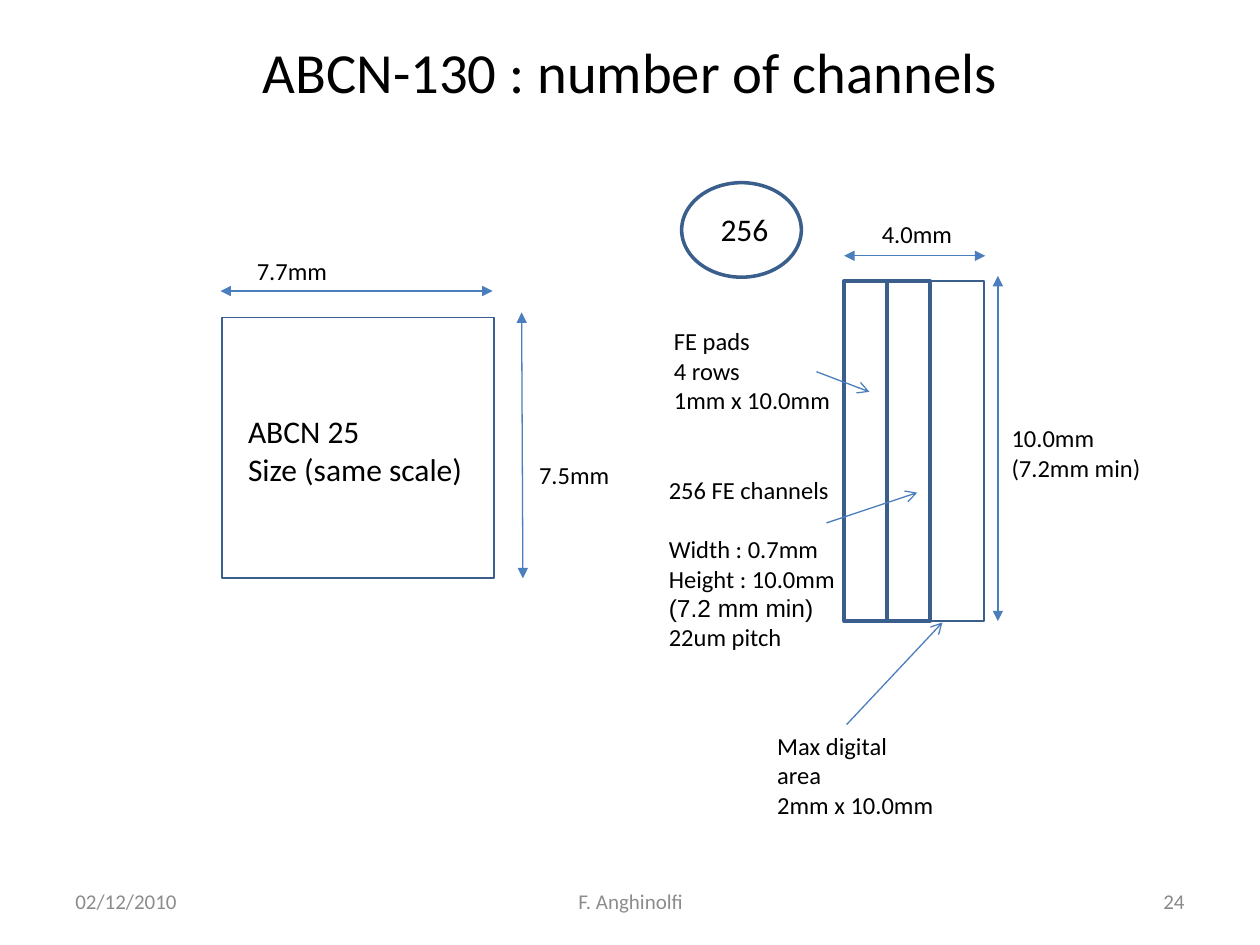
from lxml import etree
from pptx import Presentation
from pptx.dml.color import RGBColor
from pptx.enum.shapes import MSO_CONNECTOR, MSO_SHAPE
from pptx.enum.text import MSO_ANCHOR, MSO_AUTO_SIZE, PP_ALIGN
from pptx.oxml.ns import qn
from pptx.util import Inches, Pt

RECT, OVAL = MSO_SHAPE.RECTANGLE, MSO_SHAPE.OVAL
LEFT, CENTER, RIGHT = PP_ALIGN.LEFT, PP_ALIGN.CENTER, PP_ALIGN.RIGHT
TOP, MIDDLE = MSO_ANCHOR.TOP, MSO_ANCHOR.MIDDLE
FONT, BLACK, GREY = "Calibri", "000000", "8C8C8C"
OUTLINE, ARROW = "3A5F8C", "4B7EBC"

TITLE = "ABCN-130 : number of channels"

# kind, (left, top, width, height), fill, line width
CHIP_TOP, CHIP_H, STRIP_W = 2.23, 2.7, 0.34
SHAPES = [
    (OVAL, (5.41, 1.45, 0.95, 0.75), "FFFFFF", 2),
    (RECT, (1.76, 2.52, 2.16, 2.07), None, 1),
    (RECT, (6.7, CHIP_TOP, 1.11, CHIP_H), None, 1),
] + [(RECT, (6.7 + i * STRIP_W, CHIP_TOP, STRIP_W, CHIP_H), None, 2)
     for i in range(2)]

# (left, top, width, height), size, lines
LABELS = [
    ((5.25, 2.54, 1.45, 0.81), 14, ["FE pads", "4 rows", "1mm x 10.0mm"]),
    ((6.07, 5.75, 1.45, 0.81), 14, ["Max digital", "area", "2mm x 10.0mm"]),
    ((7.93, 3.31, 1.23, 0.57), 14, ["10.0mm", "(7.2mm min)"]),
    ((6.9, 1.69, 0.76, 0.34), 14, ["4.0mm"]),
    ((5.62, 1.62, 0.59, 0.4), 18, ["256"]),
    ((1.87, 3.22, 1.92, 0.71), 18, ["ABCN 25", "Size (same scale)"]),
    ((1.94, 1.98, 0.76, 0.34), 14, ["7.7mm"]),
    ((4.18, 3.6, 0.76, 0.34), 14, ["7.5mm"]),
]
CHANNELS_BOX = (5.21, 3.72, 1.53, 1.51)
CHANNELS = ["256 FE channels", "Width : 0.7mm", "Height : 10.0mm",
            "(7.2 mm min)", "22um pitch"]

# start, end
POINTERS = [
    ((6.48, 2.95), (6.9, 3.11)),
    ((6.56, 4.15), (7.28, 3.91)),
    ((6.72, 5.75), (7.48, 4.94)),
]
DIMENSIONS = [
    ((6.7, 2.03), (7.82, 2.03)),
    ((7.92, 4.93), (7.92, 2.19)),
    ((1.75, 2.31), (3.91, 2.31)),
    ((4.15, 4.59), (4.14, 2.48)),
]

FOOTER = [
    (0.5, 2.33, "02/12/2010", LEFT, GREY),
    (3.42, 3.17, "F. Anghinolfi", CENTER, GREY),
    (7.17, 2.33, "24", RIGHT, "898989"),
]


def rgb(value):
    return RGBColor.from_string(value)


def write(tf, lines, size, color=BLACK, align=LEFT, anchor=TOP):
    tf.vertical_anchor = anchor
    for i, line in enumerate(lines):
        p = tf.paragraphs[0] if i == 0 else tf.add_paragraph()
        p.alignment = align
        r = p.add_run()
        r.text = line
        r.font.name, r.font.size = FONT, Pt(size)
        r.font.color.rgb = rgb(color)


def add_label(s, box, lines, size):
    tf = s.shapes.add_textbox(*map(Inches, box)).text_frame
    tf.word_wrap = False
    tf.auto_size = MSO_AUTO_SIZE.SHAPE_TO_FIT_TEXT
    write(tf, lines, size)
    return tf


def add_outline(s, kind, box, fill, width):
    sp = s.shapes.add_shape(kind, *map(Inches, box))
    sp.shadow.inherit = False
    if fill:
        sp.fill.solid()
        sp.fill.fore_color.rgb = rgb(fill)
    else:
        sp.fill.background()
    sp.line.color.rgb = rgb(OUTLINE)
    sp.line.width = Pt(width)


def add_arrow(s, start, end, **ends):
    """Draw a line; ends maps headEnd and tailEnd to arrowhead types."""
    line = s.shapes.add_connector(MSO_CONNECTOR.STRAIGHT,
                                  *map(Inches, start + end))
    line.line.color.rgb = rgb(ARROW)
    line.line.width = Pt(0.75)
    ln = line.line._get_or_add_ln()
    for tag, kind in ends.items():
        etree.SubElement(ln, qn(f"a:{tag}"), type=kind)
    etree.SubElement(line._element.spPr, qn("a:effectLst"))


def main():
    prs = Presentation()
    prs.slide_width, prs.slide_height = Inches(10), Inches(7.5)
    s = prs.slides.add_slide(prs.slide_layouts[5])

    title = s.shapes.title
    title.left, title.top = Inches(0.5), Inches(0.3)
    title.width, title.height = Inches(9), Inches(0.53)
    write(title.text_frame, [TITLE], 32.4, align=CENTER, anchor=MIDDLE)

    for shape in SHAPES:
        add_outline(s, *shape)
    for box, size, lines in LABELS:
        add_label(s, box, lines, size)

    channels = add_label(s, CHANNELS_BOX, CHANNELS, 14).paragraphs
    channels[1].space_before = Pt(17)
    channels[3].runs[0].font.name = "Arial"

    for start, end in POINTERS:
        add_arrow(s, start, end, tailEnd="arrow")
    for start, end in DIMENSIONS:
        add_arrow(s, start, end, headEnd="triangle", tailEnd="triangle")

    for left, width, text, align, color in FOOTER:
        box = s.shapes.add_textbox(*map(Inches, (left, 6.95, width, 0.4)))
        box.text_frame.word_wrap = True
        write(box.text_frame, [text], 12, color, align, MIDDLE)

    prs.save("out.pptx")


if __name__ == "__main__":
    main()
